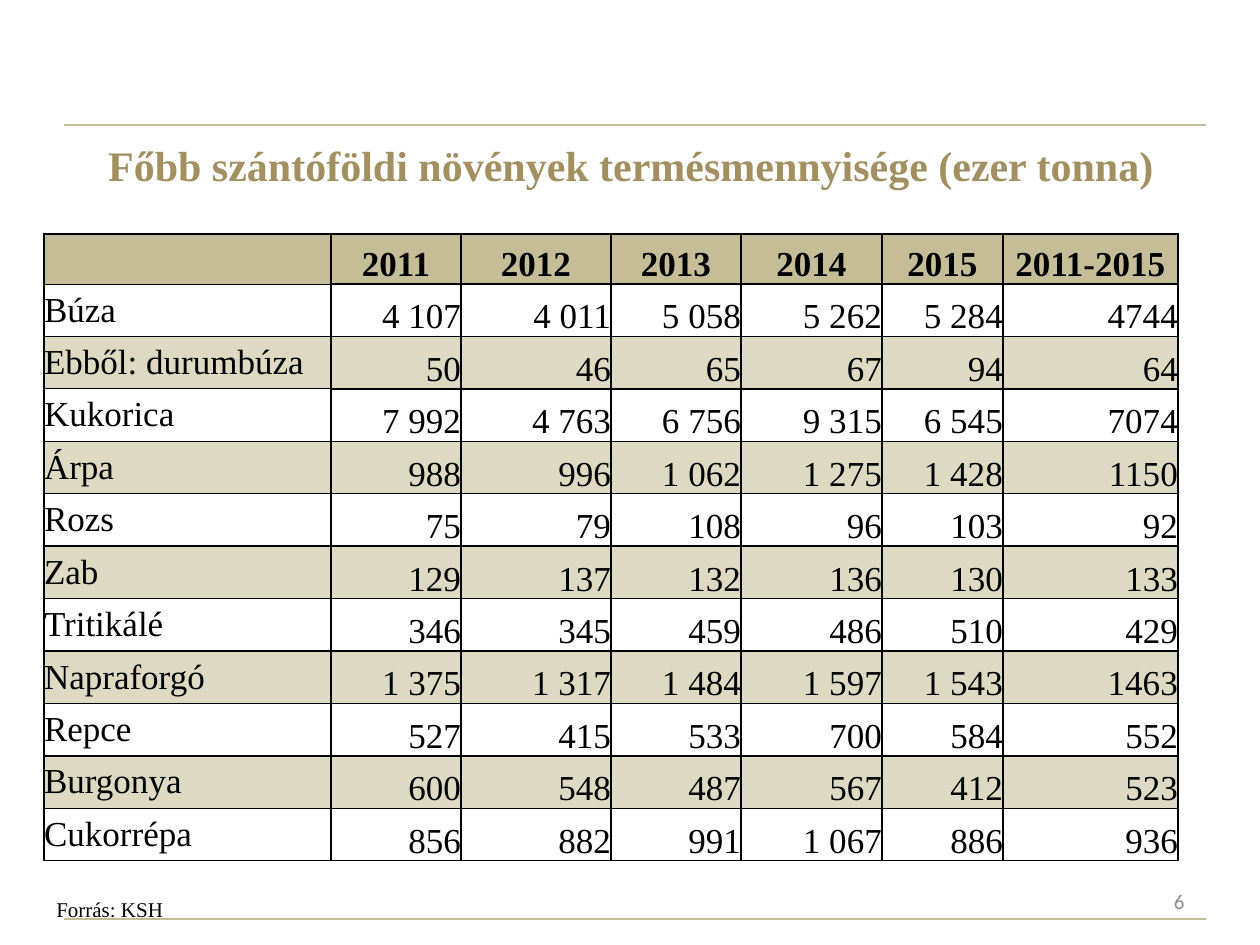
from lxml import etree
from pptx import Presentation
from pptx.dml.color import RGBColor
from pptx.enum.shapes import MSO_CONNECTOR
from pptx.enum.text import MSO_ANCHOR, PP_ALIGN
from pptx.oxml.ns import qn
from pptx.util import Emu, Pt

PX = 914400 / 126
LEFT, CENTER, RIGHT, JUSTIFY = PP_ALIGN.LEFT, PP_ALIGN.CENTER, PP_ALIGN.RIGHT, PP_ALIGN.JUSTIFY
TOP, MIDDLE, BOTTOM = MSO_ANCHOR.TOP, MSO_ANCHOR.MIDDLE, MSO_ANCHOR.BOTTOM
STRAIGHT = MSO_CONNECTOR.STRAIGHT
SERIF = "Times New Roman"
BLACK, SAND, PALE = "000000", "C4BD97", "DDD9C3"


def px(length):
    return Emu(round(length * PX))


def write(frame, text, size, color, align, font=SERIF, bold=False):
    frame.text = text
    paragraph = frame.paragraphs[0]
    paragraph.alignment = align
    for run in paragraph.runs:
        run.font.name = font
        run.font.size = Pt(size)
        run.font.bold = bold
        run.font.color.rgb = RGBColor.from_string(color)


prs = Presentation()
prs.slide_width, prs.slide_height = px(1260), px(945)
slide = prs.slides.add_slide(prs.slide_layouts[6])

for y in (919, 125):
    rule = slide.shapes.add_connector(STRAIGHT, px(64), px(y), px(1206), px(y))
    rule.line.color.rgb = RGBColor.from_string(SAND)
    rule.line.width = Pt(0.75)
    etree.SubElement(rule._element.spPr, qn("a:effectLst"))

captions = [
    ((64, 106, 1134, 118), MIDDLE, "Főbb szántóföldi növények termésmennyisége (ezer tonna)",
     24, "A29061", CENTER, SERIF, True),
    ((44, 890, 277, 38), TOP, "Forrás: KSH", 12, BLACK, LEFT, SERIF, False),
    ((903, 876, 294, 50), MIDDLE, "6", 12, "8C8C8C", RIGHT, "Calibri", False),
]
for place, anchor, *wording in captions:
    caption = slide.shapes.add_textbox(*map(px, place)).text_frame
    caption.word_wrap = True
    caption.vertical_anchor = anchor
    write(caption, *wording)

harvest = [
    ("", "2011", "2012", "2013", "2014", "2015", "2011-2015"),
    ("Búza", "4 107", "4 011", "5 058", "5 262", "5 284", "4744"),
    ("Ebből: durumbúza", "50", "46", "65", "67", "94", "64"),
    ("Kukorica", "7 992", "4 763", "6 756", "9 315", "6 545", "7074"),
    ("Árpa", "988", "996", "1 062", "1 275", "1 428", "1150"),
    ("Rozs", "75", "79", "108", "96", "103", "92"),
    ("Zab", "129", "137", "132", "136", "130", "133"),
    ("Tritikálé", "346", "345", "459", "486", "510", "429"),
    ("Napraforgó", "1 375", "1 317", "1 484", "1 597", "1 543", "1463"),
    ("Repce", "527", "415", "533", "700", "584", "552"),
    ("Burgonya", "600", "548", "487", "567", "412", "523"),
    ("Cukorrépa", "856", "882", "991", "1 067", "886", "936"),
]
column_widths = (287, 130, 150, 130, 141, 121, 175)
header_height, crops_height = 50, 577

table = slide.shapes.add_table(
    len(harvest), len(column_widths), px(44), px(234),
    px(sum(column_widths)), px(header_height + crops_height)).table
table.first_row = table.horz_banding = False
for column, width in zip(table.columns, column_widths):
    column.width = px(width)

for r, entries in enumerate(harvest):
    table.rows[r].height = px(crops_height / (len(harvest) - 1) if r else header_height)
    shaded = r % 2 == 0
    for c, entry in enumerate(entries):
        cell = table.cell(r, c)
        cell.margin_left = cell.margin_right = cell.margin_top = cell.margin_bottom = 0
        cell.vertical_anchor = BOTTOM if c or not r else MIDDLE
        align = CENTER if r == 0 else RIGHT if c else JUSTIFY
        write(cell.text_frame, entry, 20, BLACK, align, bold=r == 0)

        thin_side = "B" if shaded else "T"
        for side in "LRTB":
            width = Pt(0.5) if c == 0 and side == thin_side else Pt(1)
            border = etree.SubElement(cell._tc.get_or_add_tcPr(), qn("a:ln" + side), w=str(width))
            ink = etree.SubElement(border, qn("a:solidFill"))
            etree.SubElement(ink, qn("a:srgbClr"), val=BLACK)

        if shaded:
            cell.fill.solid()
            cell.fill.fore_color.rgb = RGBColor.from_string(PALE if r else SAND)
        else:
            cell.fill.background()

prs.save("out.pptx")
